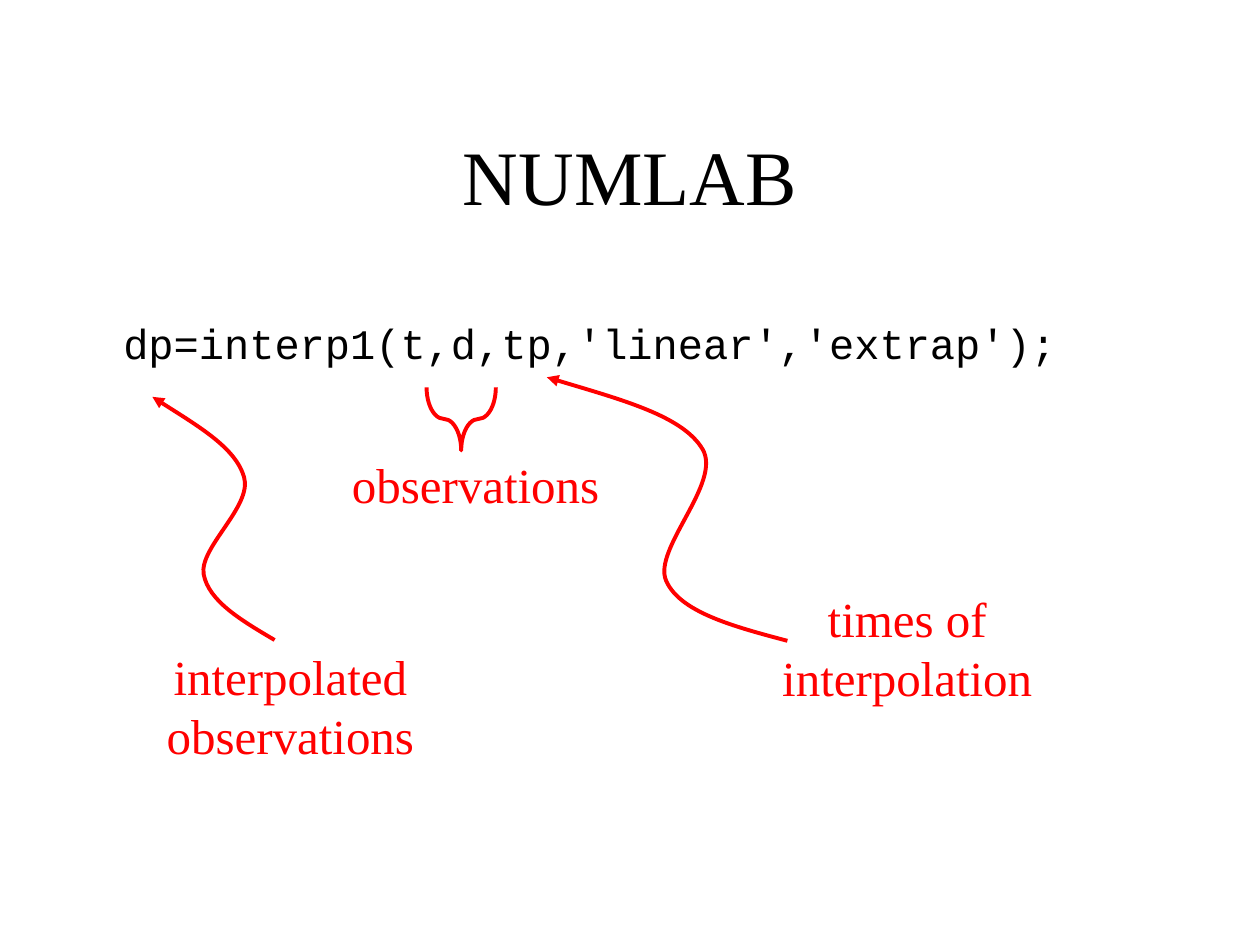
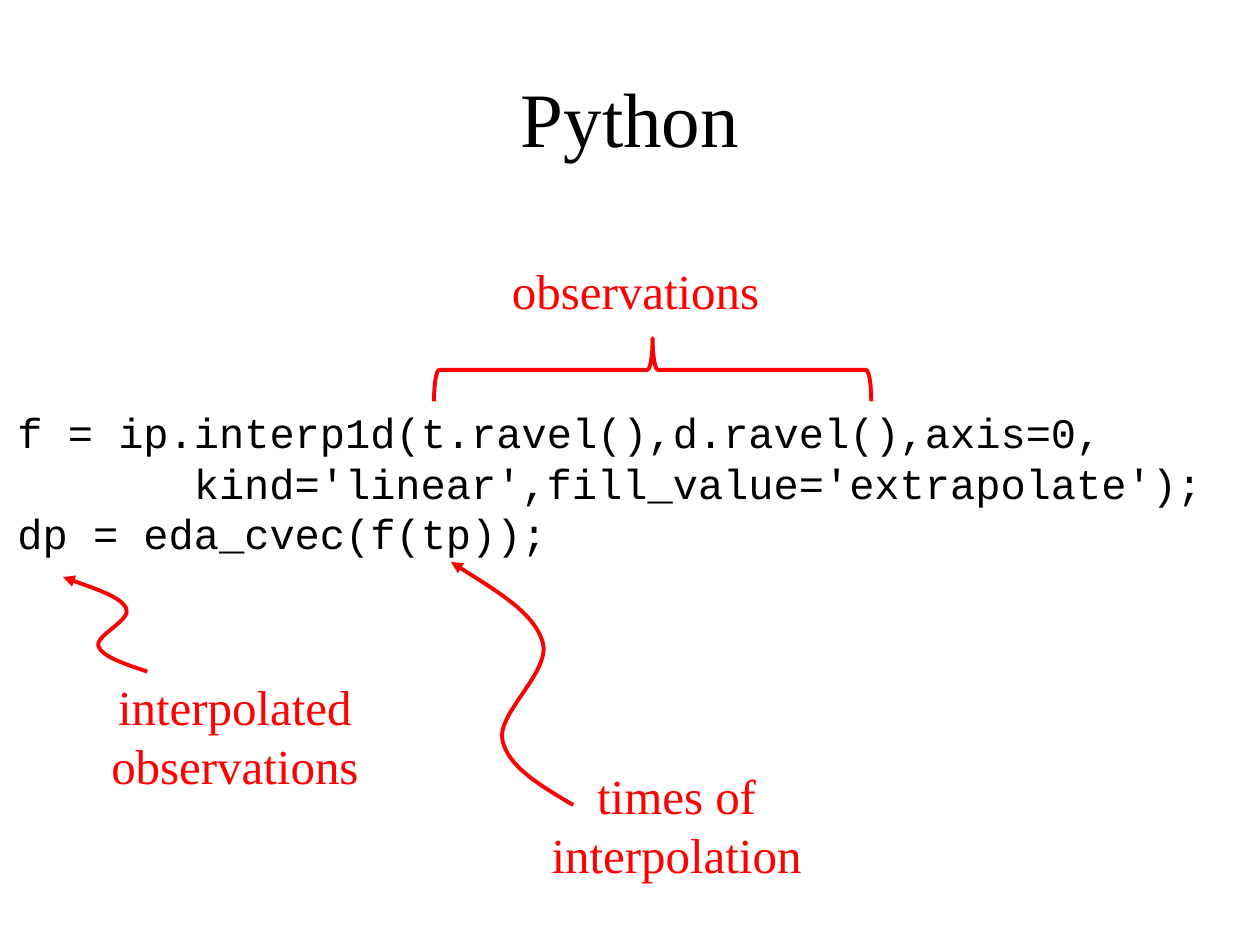
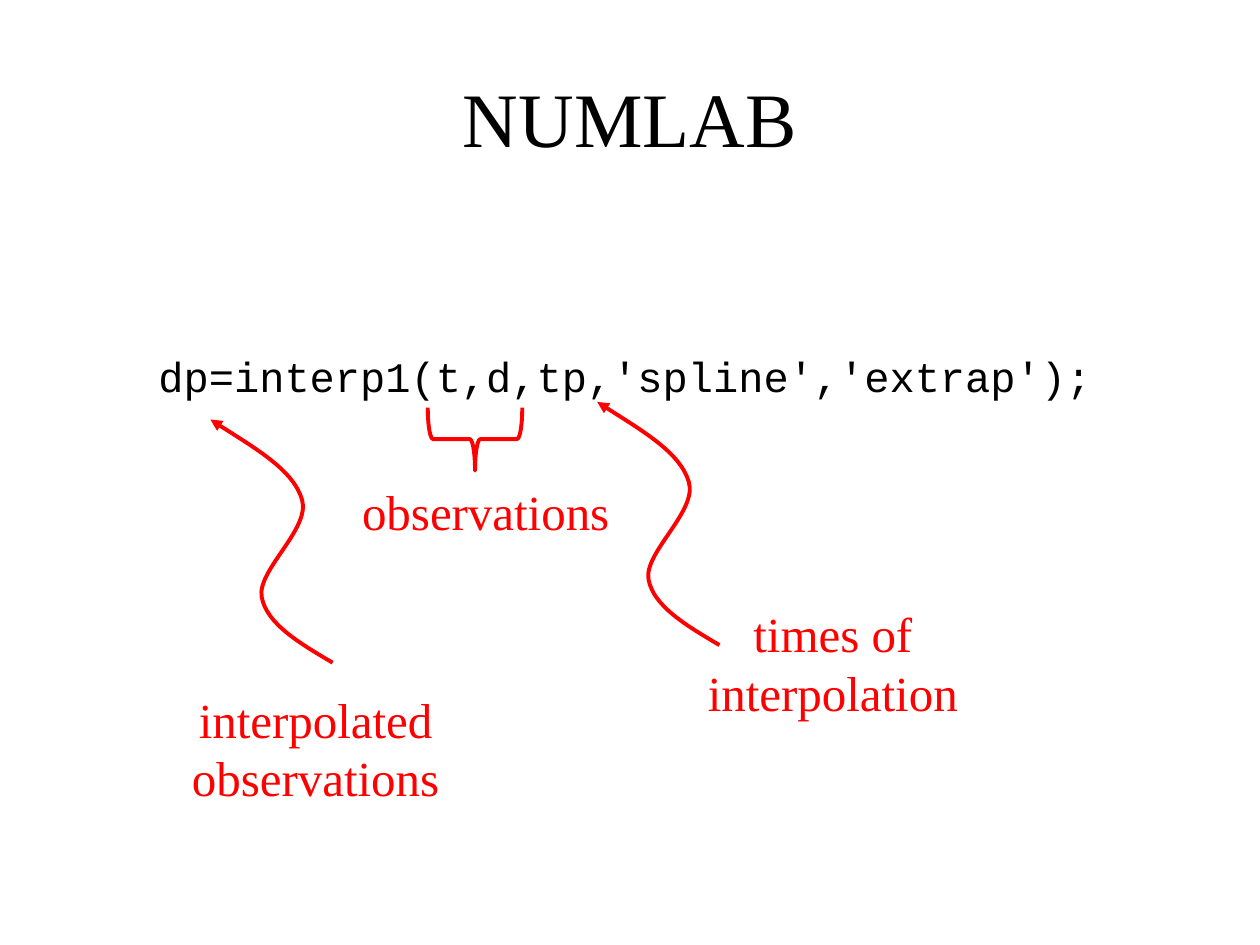
from lxml.etree import SubElement
from pptx import Presentation
from pptx.dml.color import RGBColor
from pptx.enum.shapes import MSO_SHAPE
from pptx.enum.text import MSO_ANCHOR, PP_ALIGN
from pptx.oxml.ns import qn
from pptx.util import Inches, Pt

COLORS = {"text": "000000", "note": "FF0000"}
SERIF, MONO = "Times New Roman", "Courier New"
TITLE_HEIGHT = 1.25
BRACE_DEPTH = 0.5
CONTINUATION_INDENT = 1.4  # seven characters of code

# Wavy arrow in a unit square: its tip, then three control points per curve
WAVE = [(0, 0), (0.34, 0.11), (0.68, 0.21), (0.75, 0.33), (0.82, 0.45),
        (0.38, 0.62), (0.42, 0.73), (0.46, 0.84), (0.73, 0.92), (1, 1)]

# Boxes are left, top, width, height; braces are given unrotated
SLIDES = [
    {
        "title": "NUMLAB", "title_top": 0.76,
        "brace": (3.41, 3.05, 0.55), "brace_turn": 90, "brace_curl": 0.375,
        "notes": [("observations", (2.69, 3.56, 2.17, 0.57), None, 0),
                  ("times of interpolation", (5.99, 4.62, 2.42, 1.04),
                   (4.56, 2.83, 1.47, 2.42), 348.9),
                  ("interpolated observations", (1.22, 5.08, 2.17, 1.04),
                   (1.21, 3.15, 0.97, 1.93), 0)],
        "code": ["dp=interp1(t,d,tp,'linear','extrap');"],
        "code_box": (0.88, 2.47, 7.92, 0.5),
    },
    {
        "title": "Python", "title_top": 0.3,
        "brace": (4.93, 1.2, 3.47), "brace_turn": 270, "brace_curl": 0.08333,
        "notes": [("observations", (3.96, 2.02, 2.17, 0.57), None, 0),
                  ("times of interpolation", (4.16, 6.03, 2.42, 1.04),
                   (3.58, 4.46, 0.97, 1.93), 0),
                  ("interpolated observations", (0.78, 5.32, 2.17, 1.04),
                   (0.5, 4.58, 0.67, 0.75), 0)],
        "code": ["f = ip.interp1d(t.ravel(),d.ravel(),axis=0,",
                 "kind='linear',fill_value='extrapolate');",
                 "dp = eda_cvec(f(tp));"],
        "code_box": (0.04, 3.18, 10, 1.31),
    },
    {
        "title": "NUMLAB", "title_top": 0.3,
        "brace": (3.52, 3.11, 0.75), "brace_turn": 90, "brace_curl": 0.08333,
        "notes": [("observations", (2.77, 3.77, 2.17, 0.57), None, 0),
                  ("times of interpolation", (5.4, 4.74, 2.42, 1.04),
                   (4.74, 3.19, 0.97, 1.93), 0),
                  ("interpolated observations", (1.42, 5.42, 2.17, 1.04),
                   (1.67, 3.33, 0.97, 1.93), 0)],
        "code": ["dp=interp1(t,d,tp,'spline','extrap');"],
        "code_box": (1.16, 2.73, 8.84, 0.5),
    },
]


def add_text(page, lines, bounds, font, size, color, align):
    box = page.shapes.add_textbox(*map(Inches, bounds))
    frame = box.text_frame
    frame.word_wrap = True
    frame.text = "\n".join(lines)
    for para in frame.paragraphs:
        para.alignment = align
        for span in para.runs:
            span.font.name = font
            span.font.size = Pt(size)
            span.font.color.rgb = RGBColor.from_string(COLORS[color])
    return frame


def style_outline(shape):
    shape.shadow.inherit = False
    shape.fill.background()
    shape.line.color.rgb = RGBColor.from_string(COLORS["note"])
    shape.line.width = Pt(2.25)


deck = Presentation()
deck.slide_width, deck.slide_height = Inches(10), Inches(7.5)

for content in SLIDES:
    page = deck.slides.add_slide(deck.slide_layouts[6])

    title = add_text(page, [content["title"]], (0.5, content["title_top"], 9, TITLE_HEIGHT),
                     SERIF, 44, "text", PP_ALIGN.CENTER)
    title.vertical_anchor = MSO_ANCHOR.MIDDLE

    left, top, span_length = content["brace"]
    brace = page.shapes.add_shape(MSO_SHAPE.RIGHT_BRACE, Inches(left), Inches(top),
                                  Inches(BRACE_DEPTH), Inches(span_length))
    brace.rotation = content["brace_turn"]
    brace.adjustments[0] = content["brace_curl"]
    style_outline(brace)

    for label, label_box, arrow_box, turn in content["notes"]:
        if arrow_box:
            left, top, width, height = arrow_box
            points = [(Inches(left + x * width), Inches(top + y * height)) for x, y in WAVE]
            builder = page.shapes.build_freeform(*points[0])
            builder.add_line_segments(points[1:], close=False)
            arrow = builder.convert_to_shape()
            arrow.rotation = turn
            style_outline(arrow)
            SubElement(arrow.line._get_or_add_ln(), qn("a:headEnd"), type="triangle")

            # Turn every three straight segments into one Bezier curve
            outline = arrow._element.find(".//" + qn("a:path"))
            segments = outline.findall(qn("a:lnTo"))
            for first in range(0, len(segments), 3):
                curve = SubElement(outline, qn("a:cubicBezTo"))
                for segment in segments[first:first + 3]:
                    curve.append(segment[0])
                    outline.remove(segment)

        note = add_text(page, [label], label_box, SERIF, 28, "note", PP_ALIGN.CENTER)
        note.margin_left = note.margin_right = Inches(0.05)

    code = add_text(page, content["code"], content["code_box"],
                    MONO, 24, "text", PP_ALIGN.LEFT)
    for para in code.paragraphs:
        if para.text.startswith("kind="):
            para._p.get_or_add_pPr().set("marL", str(Inches(CONTINUATION_INDENT)))

deck.save("out.pptx")
